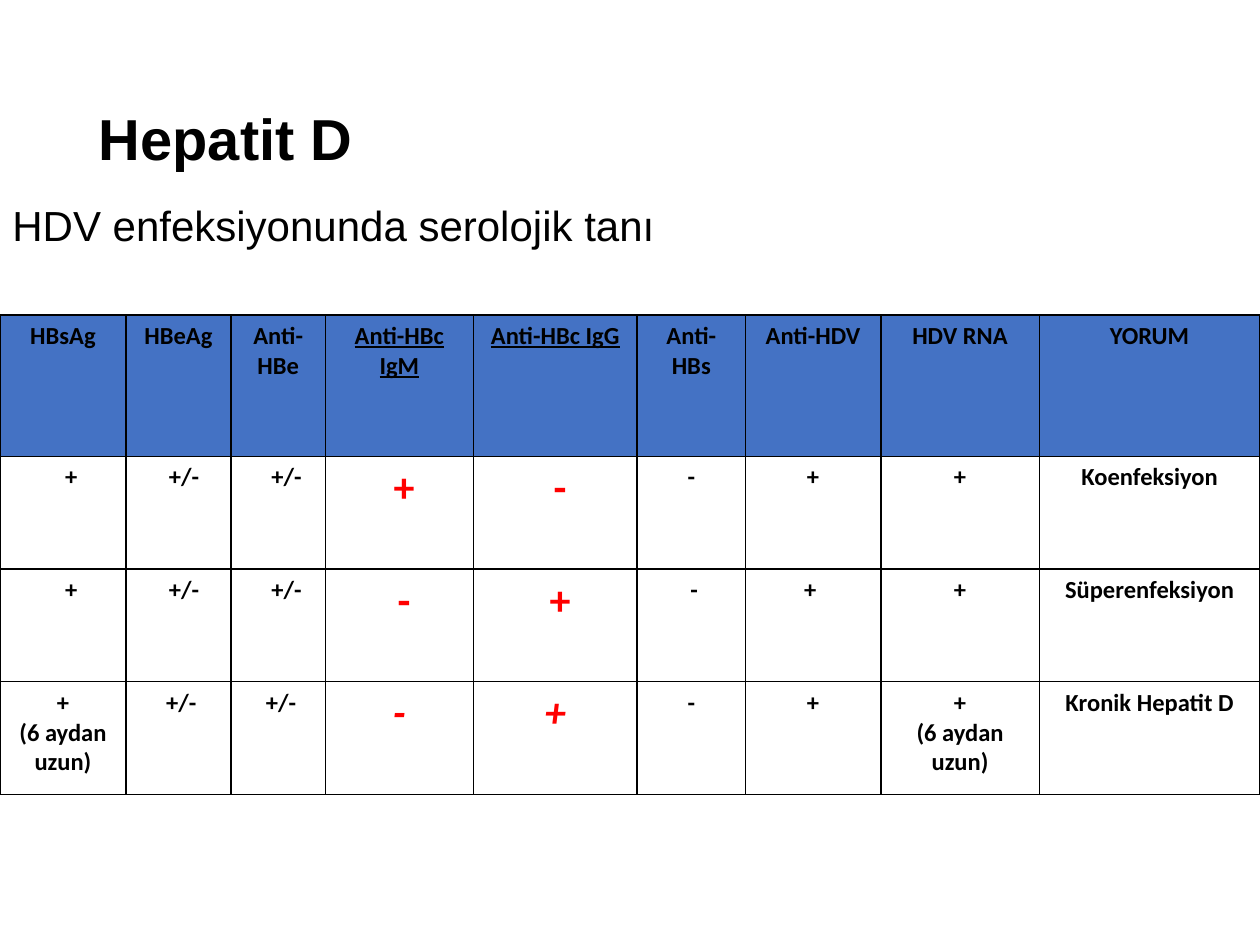
from lxml import etree
from pptx import Presentation
from pptx.dml.color import RGBColor
from pptx.enum.text import MSO_ANCHOR, PP_ALIGN
from pptx.oxml.ns import qn
from pptx.util import Pt

CENTER, LEFT = PP_ALIGN.CENTER, PP_ALIGN.LEFT
TOP, MIDDLE = MSO_ANCHOR.TOP, MSO_ANCHOR.MIDDLE

BLACK, WHITE, RED, BLUE = "000000", "FFFFFF", "FF0000", "4472C4"

TITLE = "Hepatit D"
SUBTITLE = "HDV enfeksiyonunda serolojik tanı"
HEADERS = ["HBsAg", "HBeAg", "Anti-HBe", "Anti-HBc IgM", "Anti-HBc IgG",
           "Anti-HBs", "Anti-HDV", "HDV RNA", "YORUM"]
LONG_POSITIVE = "+\n(6 aydan uzun)"
RESULTS = [
    ["+", "+/-", "+/-", "+", "-", "-", "+", "+", "Koenfeksiyon"],
    ["+", "+/-", "+/-", "-", "+", "-", "+", "+", "Süperenfeksiyon"],
    [LONG_POSITIVE, "+/-", "+/-", "-", "+", "-", "+", LONG_POSITIVE,
     "Kronik Hepatit D"],
]
# Extra left margin of each result; a negative value goes to the right margin
INDENTS = [
    [9.5, 6.3, 9.5, 5.4, 5.4, 0, 0, 0, 0],
    [9.5, 6.3, 9.5, 5.4, 5.4, 3.2, -3.2, 0, 0],
    [0, 3.2, 3.2, 0, 0, 0, 0, 0, 0],
]
KEY_COLUMNS = (3, 4)
ITALIC_ROW = 3
COLUMN_WIDTHS = [72, 60, 54, 84.5, 93.7, 61.8, 77.4, 90.6, 126]
ROW_HEIGHTS = [80.8, 64.4, 64.4, 64.4]
TABLE_TOP = 180
MARGIN = 7.2


def color(value):
    return RGBColor.from_string(value)


def write(frame, text, size=14, font="Calibri", fill=BLACK, bold=False,
          italic=False, underline=False, align=LEFT, line_spacing=None,
          space_before=None):
    frame.word_wrap = True
    for index, line in enumerate(text.split("\n")):
        paragraph = frame.add_paragraph() if index else frame.paragraphs[0]
        paragraph.alignment = align
        paragraph.line_spacing = line_spacing
        if space_before is not None:
            paragraph.space_before = Pt(space_before)
        run = paragraph.add_run()
        run.text = line
        run.font.size = Pt(size)
        run.font.name = font
        run.font.color.rgb = color(fill)
        run.font.bold = bold
        run.font.italic = italic
        run.font.underline = underline


def add_text(slide, text, left, top, width, height, anchor=TOP, **style):
    box = slide.shapes.add_textbox(Pt(left), Pt(top), Pt(width), Pt(height))
    box.text_frame.vertical_anchor = anchor
    write(box.text_frame, text, font="Arial", line_spacing=0.9, **style)


def set_borders(cell, width=1):
    properties = cell._tc.get_or_add_tcPr()
    for index, side in enumerate(("lnL", "lnR", "lnT", "lnB")):
        line = etree.Element(qn(f"a:{side}"), w=str(Pt(width)))
        fill = etree.SubElement(line, qn("a:solidFill"))
        etree.SubElement(fill, qn("a:srgbClr"), val=BLACK)
        properties.insert(index, line)


def cell_style(row, column):
    key = column in KEY_COLUMNS
    if row == 0:
        return {"underline": key}
    if key:
        return {"size": 24, "fill": RED, "italic": row == ITALIC_ROW}
    return {}


def add_results_table(slide):
    rows = [HEADERS] + RESULTS
    indents = [[0] * len(HEADERS)] + INDENTS
    frame = slide.shapes.add_table(
        len(rows), len(HEADERS), Pt(0), Pt(TABLE_TOP),
        Pt(sum(COLUMN_WIDTHS)), Pt(sum(ROW_HEIGHTS)))
    table = frame.table
    for column, width in zip(table.columns, COLUMN_WIDTHS):
        column.width = Pt(width)
    for row, height in zip(table.rows, ROW_HEIGHTS):
        row.height = Pt(height)
    for r, texts in enumerate(rows):
        for c, text in enumerate(texts):
            cell = table.cell(r, c)
            cell.fill.solid()
            cell.fill.fore_color.rgb = color(WHITE if r else BLUE)
            cell.margin_left = Pt(MARGIN + max(indents[r][c], 0))
            cell.margin_right = Pt(MARGIN + max(-indents[r][c], 0))
            set_borders(cell)
            write(cell.text_frame, text, bold=True, align=CENTER,
                  **cell_style(r, c))


def main():
    presentation = Presentation()
    presentation.slide_width, presentation.slide_height = Pt(720), Pt(540)
    slide = presentation.slides.add_slide(presentation.slide_layouts[6])
    add_text(slide, TITLE, 49.5, 28.75, 621, 104.4, anchor=MIDDLE,
             size=33, bold=True)
    add_text(slide, SUBTITLE, 0, 113.75, 670.5, 372, size=24,
             space_before=7.5)
    add_results_table(slide)
    presentation.save("out.pptx")


if __name__ == "__main__":
    main()
